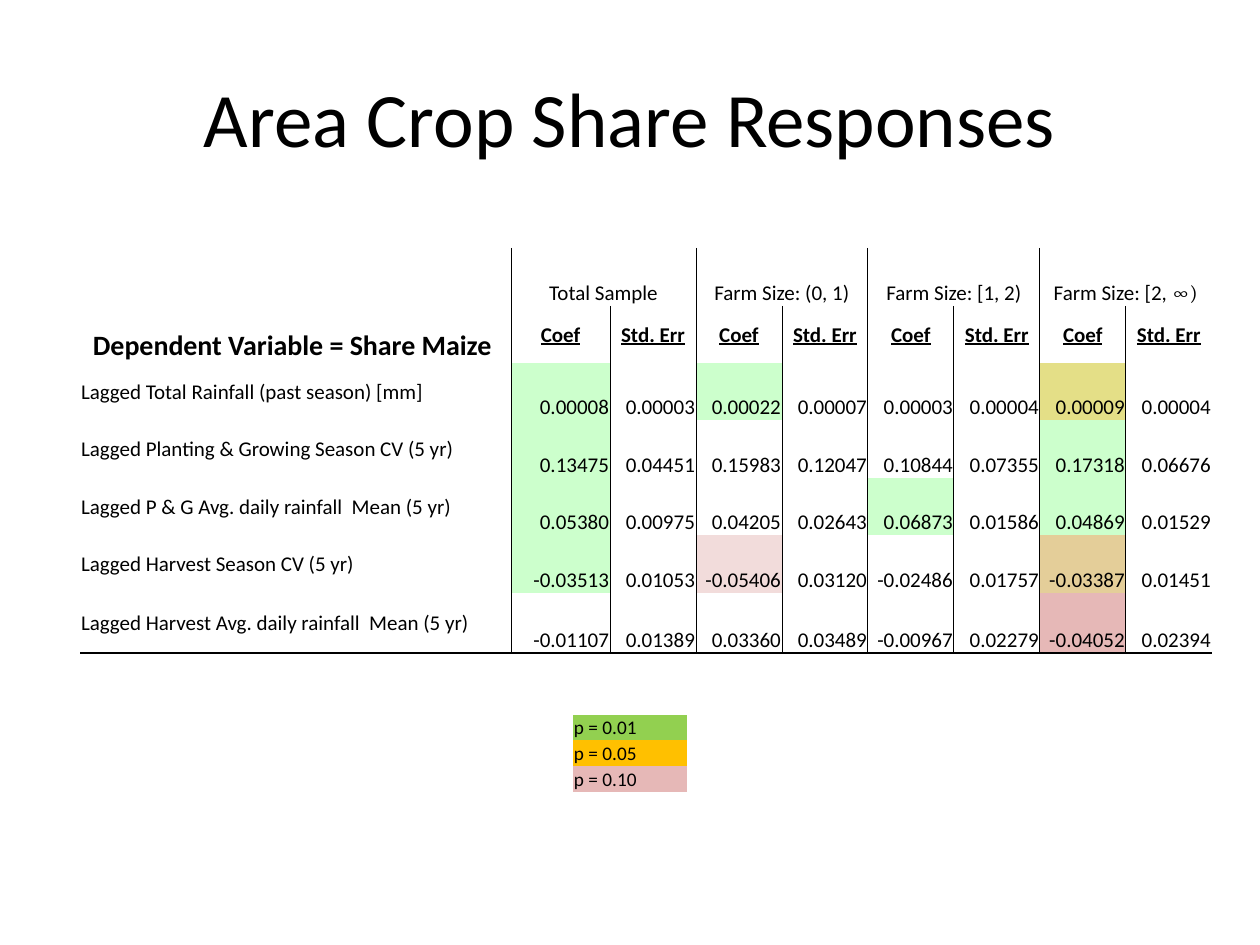
from lxml import etree
from pptx import Presentation
from pptx.dml.color import RGBColor
from pptx.enum.text import MSO_ANCHOR, PP_ALIGN
from pptx.oxml.ns import qn
from pptx.util import Emu, Pt

LEFT, CENTER, RIGHT = PP_ALIGN.LEFT, PP_ALIGN.CENTER, PP_ALIGN.RIGHT
MIDDLE, BOTTOM = MSO_ANCHOR.MIDDLE, MSO_ANCHOR.BOTTOM

# Content
TITLE = "Area Crop Share Responses"
DEPENDENT = "Dependent Variable = Share Maize "
SAMPLES = [  # each sample heading: runs of (text, font)
    [("Total Sample", "Calibri")],
    [("Farm Size: (0, 1)", "Calibri")],
    [("Farm Size: [1, 2)", "Calibri")],
    [("Farm Size: [2, ", "Calibri"), ("∞)", "Cambria")],
]
MEASURES = ["Coef", "Std. Err"]
RESPONSES = [
    ("Lagged Total Rainfall (past season) [mm]",
     "0.00008 0.00003 0.00022 0.00007 0.00003 0.00004 0.00009 0.00004"),
    ("Lagged Planting & Growing Season CV (5 yr)",
     "0.13475 0.04451 0.15983 0.12047 0.10844 0.07355 0.17318 0.06676"),
    ("Lagged P & G Avg. daily rainfall  Mean (5 yr)",
     "0.05380 0.00975 0.04205 0.02643 0.06873 0.01586 0.04869 0.01529"),
    ("Lagged Harvest Season CV (5 yr)",
     "-0.03513 0.01053 -0.05406 0.03120 -0.02486 0.01757 -0.03387 0.01451"),
    ("Lagged Harvest Avg. daily rainfall  Mean (5 yr)",
     "-0.01107 0.01389 0.03360 0.03489 -0.00967 0.02279 -0.04052 0.02394"),
]
LEGEND = [("p = 0.01", "lime"), ("p = 0.05", "amber"), ("p = 0.10", "rose")]

COLORS = {"black": "000000", "green": "CCFFCC", "olive": "E4DF87",
          "tan": "E4CE99", "blush": "F2DCDB", "rose": "E6B8B7",
          "lime": "92D050", "amber": "FFC000"}
HIGHLIGHTS = {  # (response, sample): colour of its coefficient
    (0, 0): "green", (0, 1): "green", (0, 3): "olive",
    (1, 0): "green", (1, 3): "green",
    (2, 0): "green", (2, 2): "green", (2, 3): "green",
    (3, 0): "green", (3, 1): "blush", (3, 3): "tan",
    (4, 3): "rose",
}

# Layout in px
SCALE = 914400 / 126
TITLE_BOX = (63, 38, 1134, 157)
RESPONSE_AT, LEGEND_AT = (80, 248), (573, 715)
RESPONSE_COLS = [431, 99] + [86] * 7
RESPONSE_ROWS = [58, 57, 57, 58, 57, 58, 60]
LEGEND_COLS, LEGEND_ROWS = [114], [25, 26, 26]
PLAIN_STYLE = "{2D5ABB26-0587-4C30-8999-92F81FD0307C}"


def px(n):
    return Emu(round(n * SCALE))


def rgb(name):
    return RGBColor.from_string(COLORS[name])


def add_plain_table(slide, at, cols, rows):
    box = [px(n) for n in (*at, sum(cols), sum(rows))]
    table = slide.shapes.add_table(len(rows), len(cols), *box).table
    table.first_row = table.horz_banding = False
    table._tbl.tblPr.find(qn("a:tableStyleId")).text = PLAIN_STYLE
    for column, width in zip(table.columns, cols):
        column.width = px(width)
    for row, height in zip(table.rows, rows):
        row.height = px(height)
    return table


def write(cell, runs, align=LEFT, anchor=BOTTOM, **font):
    if isinstance(runs, str):
        runs = [(runs, "Calibri")]
    cell.vertical_anchor = anchor
    paragraph = cell.text_frame.paragraphs[0]
    paragraph.alignment = align
    for text, face in runs:
        run = paragraph.add_run()
        run.text = text
        run.font.color.rgb = rgb("black")
        for key, value in {"name": face, "size": Pt(12), **font}.items():
            setattr(run.font, key, value)


def finish(cell, color=None, borders=()):
    """Set margins, then borders as (side, points), then the fill."""
    for side, margin in {"left": 1, "right": 1, "top": 1, "bottom": 0}.items():
        setattr(cell, f"margin_{side}", px(margin))
    properties = cell._tc.get_or_add_tcPr()
    for side, points in borders:
        line = etree.SubElement(properties, qn(f"a:ln{side}"), w=str(Pt(points)))
        fill = etree.SubElement(line, qn("a:solidFill"))
        etree.SubElement(fill, qn("a:srgbClr"), val=COLORS["black"])
    if color:
        cell.fill.solid()
        cell.fill.fore_color.rgb = rgb(color)
    else:
        cell.fill.background()


prs = Presentation()
prs.slide_width, prs.slide_height = px(1260), px(945)
slide = prs.slides.add_slide(prs.slide_layouts[5])

# Title
title = slide.shapes.title
title.left, title.top, title.width, title.height = map(px, TITLE_BOX)
title.text_frame.text = TITLE
title_font = title.text_frame.paragraphs[0].font
title_font.name, title_font.size = "Calibri", Pt(44)
title_font.color.rgb = rgb("black")

# Response table: headings
responses = add_plain_table(slide, RESPONSE_AT, RESPONSE_COLS, RESPONSE_ROWS)
responses.cell(0, 0).merge(responses.cell(1, 0))
write(responses.cell(0, 0), DEPENDENT, CENTER, size=Pt(16), bold=True)
for s, sample in enumerate(SAMPLES):
    first = 1 + 2 * s
    responses.cell(0, first).merge(responses.cell(0, first + 1))
    write(responses.cell(0, first), sample, CENTER)
    for m, measure in enumerate(MEASURES):
        write(responses.cell(1, first + m), measure, CENTER, MIDDLE,
              bold=True, underline=True)

# Response table: values
for r, (label, values) in enumerate(RESPONSES, start=2):
    write(responses.cell(r, 0), label, anchor=MIDDLE)
    for c, value in enumerate(values.split(), start=1):
        write(responses.cell(r, c), value, RIGHT)

# Response table: a rule before each sample and one along the foot
last_row, last_col = len(RESPONSE_ROWS) - 1, len(RESPONSE_COLS) - 1
for r in range(last_row + 1):
    for c in range(last_col + 1):
        borders = []
        if c % 2:
            borders.append(("L", 0.5))
        elif c < last_col:
            borders.append(("R", 0.5))
        if r == last_row:
            borders.append(("B", 1))
        color = HIGHLIGHTS.get((r - 2, c // 2)) if c % 2 else None
        finish(responses.cell(r, c), color, borders)

# Significance legend
legend = add_plain_table(slide, LEGEND_AT, LEGEND_COLS, LEGEND_ROWS)
for r, (level, color) in enumerate(LEGEND):
    write(legend.cell(r, 0), level, size=Pt(11))
    finish(legend.cell(r, 0), color)

prs.save("out.pptx")
